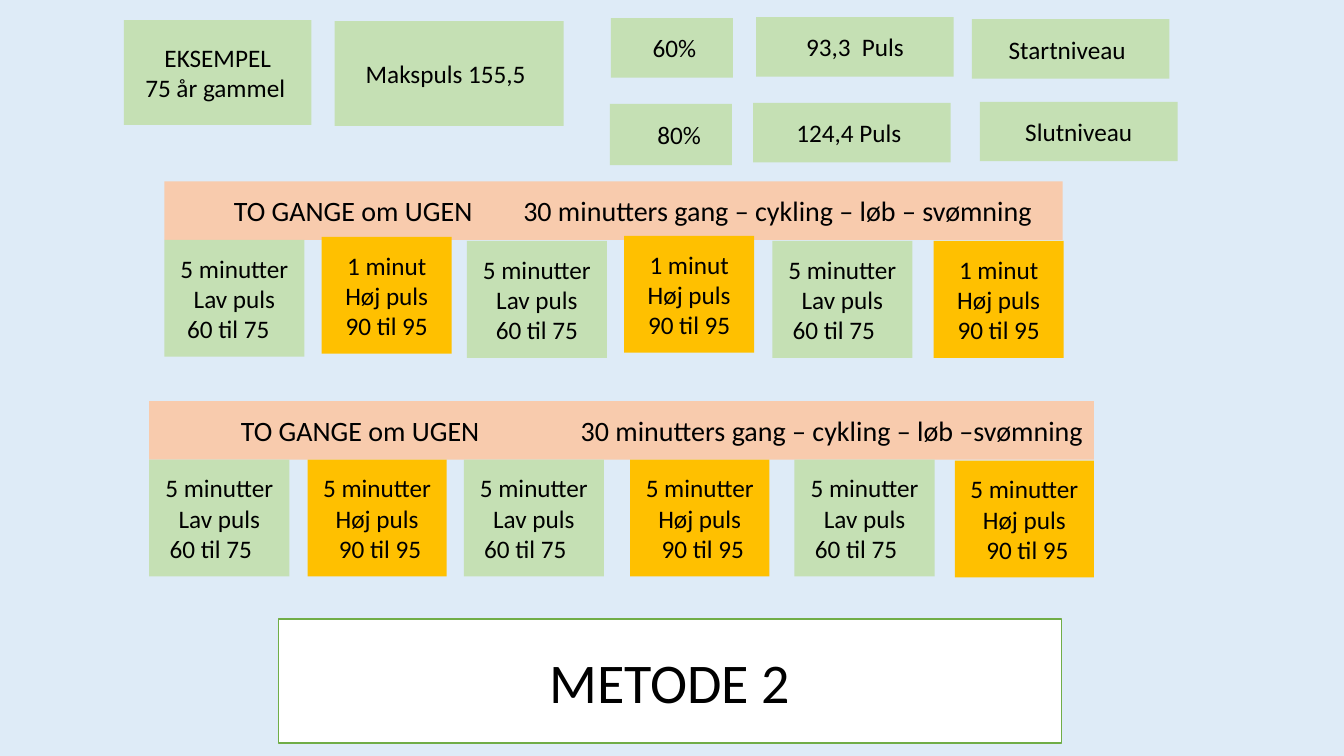
from pptx import Presentation
from pptx import util as u
from pptx.dml.color import RGBColor
from pptx.enum import shapes, text
from pptx.oxml.ns import qn
from lxml import etree

SKY = RGBColor(0xDE, 0xEB, 0xF7)
GREEN = RGBColor(0xC5, 0xE0, 0xB4)
AMBER = RGBColor(0xFF, 0xC0, 0x00)
PEACH = RGBColor(0xF8, 0xCB, 0xAD)
WHITE = RGBColor(0xFF, 0xFF, 0xFF)
BLACK = RGBColor(0x00, 0x00, 0x00)
EDGE = RGBColor(0x70, 0xAD, 0x47)

LABELS = [
    (1.23, 0.2, 1.86, 1.04, ["EKSEMPEL", "75 år gammel"], -0.05),
    (3.32, 0.21, 2.27, 1.04, ["Makspuls 155,5"], -0.07),
    (6.06, 0.18, 1.21, 0.59, ["60%"], 0.05),
    (6.05, 1.03, 1.21, 0.61, ["80%"], 0.16),
    (7.5, 0.17, 1.96, 0.59, ["93,3\u00a0 Puls"], 0),
    (7.47, 1.02, 1.96, 0.59, ["124,4 Puls"], -0.06),
    (9.64, 0.19, 1.96, 0.59, ["Startniveau"], -0.07),
    (9.72, 1.01, 1.96, 0.59, ["Slutniveau"], 0),
]
LOW = ["5 minutter", "Lav puls", "60 til 75"]
SHORT_HIGH = ["1 minut", "Høj puls 90 til 95"]
LONG_HIGH = ["5 minutter", "Høj puls", "90 til 95"]
SHORT_ROW = [(1.63, 2.38, -0.12), (3.19, 2.35, 0), (4.63, 2.39, 0),
             (6.19, 2.34, 0), (7.66, 2.39, -0.17), (9.26, 2.39, 0)]
LONG_ROW = [(1.48, 4.56, -0.17), (3.05, 4.56, 0.06), (4.6, 4.56, -0.17),
            (6.25, 4.56, 0.06), (7.88, 4.56, -0.17), (9.47, 4.57, 0.06)]


def write(tf, lines, size=18, align=text.PP_ALIGN.CENTER, shift=0):
    """Fill a text frame with lines, nudging the last one sideways by shift."""
    tf.word_wrap = True
    tf.auto_size = text.MSO_AUTO_SIZE.NONE
    tf.vertical_anchor = text.MSO_ANCHOR.MIDDLE
    for i, line in enumerate(lines):
        p = tf.add_paragraph() if i else tf.paragraphs[0]
        p.alignment = align
        r = p.add_run()
        r.text = line
        r.font.size = u.Pt(size)
        r.font.name = "Calibri"
        r.font.color.rgb = BLACK
    if shift:
        side = "marL" if shift > 0 else "marR"
        p._p.get_or_add_pPr().set(side, str(u.Inches(abs(shift))))


def box(s, x, y, w, h, color):
    """Add a plain borderless rectangle."""
    sp = s.shapes.add_shape(shapes.MSO_SHAPE.RECTANGLE, u.Inches(x),
                            u.Inches(y), u.Inches(w), u.Inches(h))
    sp.shadow.inherit = False
    sp.fill.solid()
    sp.fill.fore_color.rgb = color
    sp.line.fill.background()
    return sp


def bar(s, x, y, w, activity, inset, tab):
    """Add a heading bar whose two parts are set apart by a tab stop."""
    tf = box(s, x, y, w, 0.58, PEACH).text_frame
    write(tf, ["TO GANGE om UGEN\t" + activity], size=20,
          align=text.PP_ALIGN.LEFT)
    tf.margin_left = u.Inches(inset)
    tf.margin_right = 0
    stops = etree.SubElement(tf.paragraphs[0]._p.get_or_add_pPr(),
                             qn("a:tabLst"))
    etree.SubElement(stops, qn("a:tab"), pos=str(u.Inches(tab)), algn="l")


def intervals(s, places, high, high_width):
    """Add a row that alternates low and high pulse intervals."""
    for i, (x, y, shift) in enumerate(places):
        lines, w, color = ((high, high_width, AMBER) if i % 2
                           else (LOW, 1.39, GREEN))
        write(box(s, x, y, w, 1.16, color).text_frame, lines, shift=shift)


def title(s, words):
    """Move and format the title placeholder."""
    sp = s.shapes.title
    sp.left, sp.top = u.Inches(2.76), u.Inches(6.14)
    sp.width, sp.height = u.Inches(7.77), u.Inches(1.23)
    sp.fill.solid()
    sp.fill.fore_color.rgb = WHITE
    sp.line.color.rgb = EDGE
    sp.line.width = u.Pt(1)
    write(sp.text_frame, [words], size=40)


def main():
    """Build the slide and save it."""
    prs = Presentation()
    prs.slide_width, prs.slide_height = u.Inches(13.33), u.Inches(7.5)
    s = prs.slides.add_slide(prs.slide_layouts[5])
    s.background.fill.solid()
    s.background.fill.fore_color.rgb = SKY
    title(s, "METODE 2")
    for x, y, w, h, lines, shift in LABELS:
        write(box(s, x, y, w, h, GREEN).text_frame, lines, shift=shift)
    bar(s, 1.63, 1.8, 8.91, "30 minutters gang – cykling – løb – svømning",
        0.69, 2.87)
    intervals(s, SHORT_ROW, SHORT_HIGH, 1.29)
    bar(s, 1.48, 3.98, 9.37, "30 minutters gang – cykling – løb –svømning",
        0.91, 3.37)
    intervals(s, LONG_ROW, LONG_HIGH, 1.38)
    prs.save("out.pptx")


if __name__ == "__main__":
    main()
